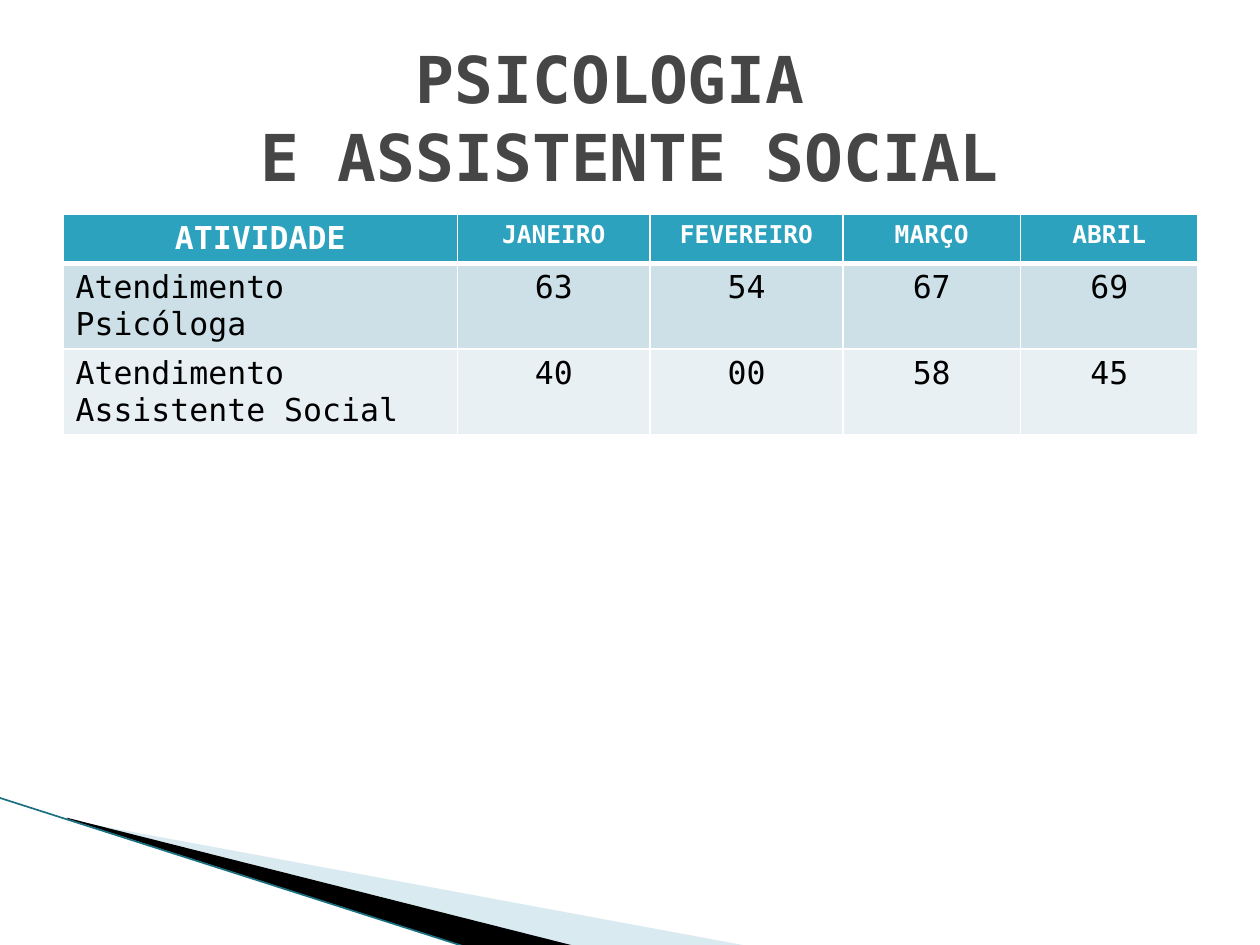
from lxml import etree
from pptx import Presentation
from pptx.dml.color import RGBColor
from pptx.enum.shapes import MSO_CONNECTOR
from pptx.enum.text import MSO_ANCHOR, PP_ALIGN
from pptx.oxml import parse_xml
from pptx.oxml.ns import nsdecls, qn
from pptx.util import Inches, Pt

CENTER, LEFT = PP_ALIGN.CENTER, PP_ALIGN.LEFT
MIDDLE = MSO_ANCHOR.MIDDLE
STRAIGHT = MSO_CONNECTOR.STRAIGHT

FONT = "DejaVu Sans Mono"
WHITE = RGBColor(0xFF, 0xFF, 0xFF)
BLACK = RGBColor(0x00, 0x00, 0x00)
TITLE_GRAY = RGBColor(0x46, 0x46, 0x46)
HEADER_TEAL = RGBColor(0x2D, 0xA2, 0xBF)
BAND_BLUE = RGBColor(0xCD, 0xE0, 0xE8)
BAND_LIGHT = RGBColor(0xE8, 0xF0, 0xF4)
WEDGE_BLUE = RGBColor(0xA0, 0xCB, 0xDC)
LINE_TEAL = RGBColor(0x18, 0x70, 0x80)


def add_wedge(shapes, points, color):
    corners = [(Inches(x), Inches(y)) for x, y in points]
    builder = shapes.build_freeform(*corners[0], scale=1.0)
    builder.add_line_segments(corners[1:], close=True)
    wedge = builder.convert_to_shape()
    wedge.shadow.inherit = False
    wedge.fill.solid()
    wedge.fill.fore_color.rgb = color
    wedge.line.fill.background()
    return wedge


def add_run(paragraph, text, size, color, bold):
    run = paragraph.add_run()
    run.text = text
    run.font.name = FONT
    run.font.size = Pt(size)
    run.font.bold = bold
    run.font.color.rgb = color


presentation = Presentation()
presentation.slide_width = Inches(10)
presentation.slide_height = Inches(7.5)
slide = presentation.slides.add_slide(presentation.slide_layouts[6])
shapes = slide.shapes

light_wedge = add_wedge(
    shapes, [(0.55, 6.51), (5.95, 7.51), (4.56, 7.51), (0.55, 6.5)], WEDGE_BLUE
)
light_color = light_wedge.fill._xPr.find(qn("a:solidFill"))[0]
etree.SubElement(light_color, qn("a:alpha"), val="40000")
add_wedge(shapes, [(0.53, 6.49), (4.57, 7.51), (3.72, 7.52), (0.54, 6.5)], BLACK)

edge = shapes.add_connector(
    STRAIGHT, Inches(-0.01), Inches(6.33), Inches(3.71), Inches(7.52)
)
edge.line.color.rgb = LINE_TEAL
edge.line.width = Pt(0.95)
etree.SubElement(edge._element.spPr, qn("a:effectLst"))

rows = [
    ["ATIVIDADE", "JANEIRO", "FEVEREIRO", "MARÇO", "ABRIL"],
    ["Atendimento Psicóloga", "63", "54", "67", "69"],
    ["Atendimento Assistente Social", "40", "00", "58", "45"],
]
column_widths = [3.13, 1.53, 1.53, 1.41, 1.41]
row_heights = [0.38, 0.68, 0.68]
row_fills = [HEADER_TEAL, BAND_BLUE, BAND_LIGHT]

table = shapes.add_table(
    len(rows), len(column_widths), Inches(0.5), Inches(1.7),
    Inches(sum(column_widths)), Inches(sum(row_heights)),
).table
for column, width in zip(table.columns, column_widths):
    column.width = Inches(width)
for row, height in zip(table.rows, row_heights):
    row.height = Inches(height)

for row_index, texts in enumerate(rows):
    is_header = row_index == 0
    for column_index, text in enumerate(texts):
        cell = table.cell(row_index, column_index)
        properties = cell._tc.get_or_add_tcPr()
        for side in "LRTB":
            thick = (row_index, side) in [(0, "B"), (1, "T")]
            width = Pt(3 if thick else 1)
            properties.append(parse_xml(
                f'<a:ln{side} {nsdecls("a")} w="{width}"><a:solidFill>'
                f'<a:srgbClr val="{WHITE}"/></a:solidFill></a:ln{side}>'
            ))
        cell.fill.solid()
        cell.fill.fore_color.rgb = row_fills[row_index]
        paragraph = cell.text_frame.paragraphs[0]
        paragraph.alignment = CENTER if is_header or column_index else LEFT
        size = 14 if is_header and column_index else 18
        add_run(paragraph, text, size, WHITE if is_header else BLACK, is_header)

title = shapes.add_textbox(Inches(0.5), Inches(0.3), Inches(9), Inches(1.25))
title_frame = title.text_frame
title_frame.word_wrap = True
title_frame.vertical_anchor = MIDDLE
paragraph = title_frame.paragraphs[0]
paragraph.alignment = CENTER
add_run(paragraph, "PSICOLOGIA ", 36.9, TITLE_GRAY, True)
paragraph.add_line_break()
add_run(paragraph, "E ASSISTENTE SOCIAL", 36.9, TITLE_GRAY, True)

presentation.save("out.pptx")
